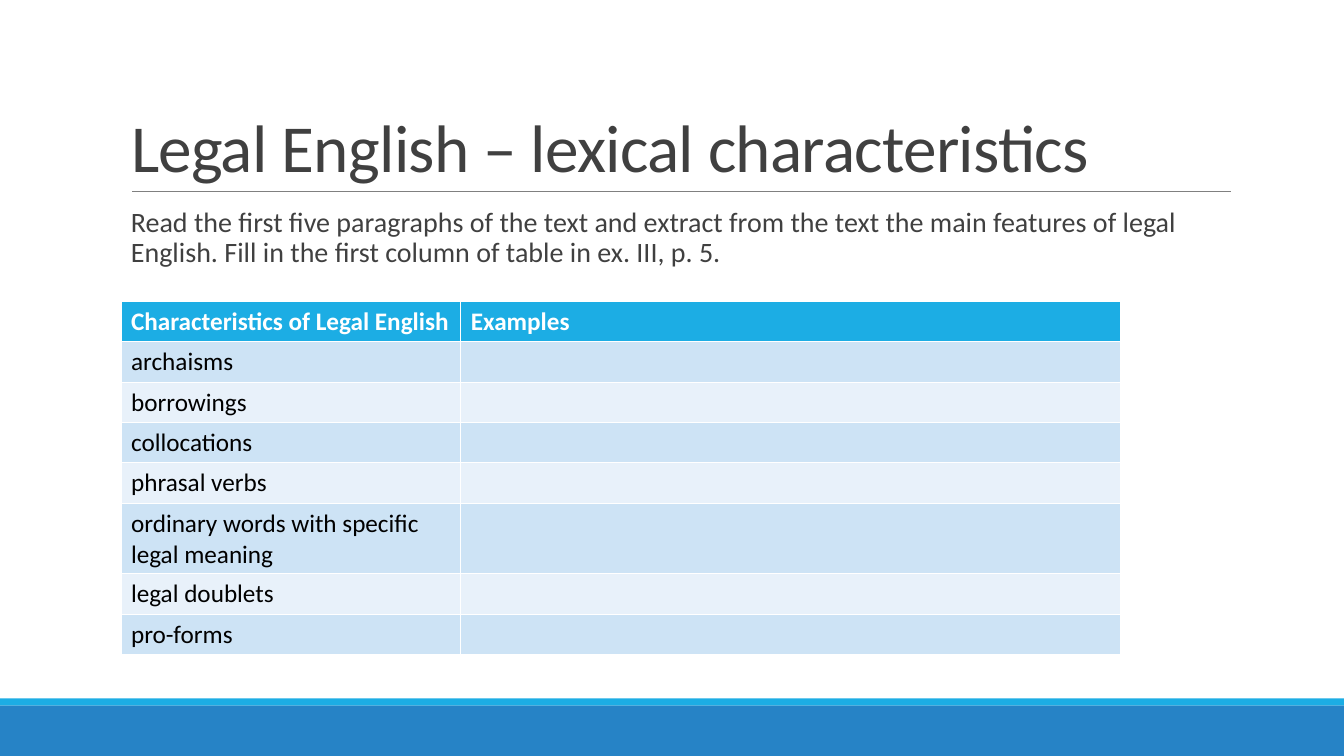
from pptx import Presentation
from pptx.dml.color import RGBColor
from pptx.enum.shapes import MSO_CONNECTOR, MSO_SHAPE
from pptx.enum.text import MSO_ANCHOR, PP_ALIGN
from pptx.oxml.ns import qn
from pptx.util import Inches, Pt
from lxml.etree import SubElement

FONT = "Calibri"
WHITE = RGBColor(0xFF, 0xFF, 0xFF)
BLACK = RGBColor(0, 0, 0)
GREY = RGBColor(0x80, 0x80, 0x80)
DARK = RGBColor(0x40, 0x40, 0x40)
CYAN = RGBColor(0x1C, 0xAD, 0xE4)
BLUE = RGBColor(0x26, 0x83, 0xC6)
BANDS = [RGBColor(0xCD, 0xE3, 0xF5), RGBColor(0xE8, 0xF1, 0xFA)]

TITLE = "Legal English – lexical characteristics"
TASK = ("Read the first five paragraphs of the text and extract from the text "
        "the main features of legal English. Fill in the first column of table "
        "in ex. III, p. 5.")
HEADERS = ["Characteristics of Legal English", "Examples"]
FEATURES = ["archaisms", "borrowings", "collocations", "phrasal verbs",
            "ordinary words with specific legal meaning", "legal doublets",
            "pro-forms"]


def add_run(p, text, size, color, bold=False):
    r = p.add_run()
    r.text = text
    r.font.name = FONT
    r.font.size = Pt(size)
    r.font.bold = bold
    r.font.color.rgb = color
    return r


def add_footer(s, left, top, width, height):
    strip = 0.07
    bars = [(top, strip, CYAN), (top + strip, height - strip, BLUE)]
    for y, h, color in bars:
        sp = s.shapes.add_shape(MSO_SHAPE.RECTANGLE, Inches(left), Inches(y),
                                Inches(width), Inches(h))
        sp.shadow.inherit = False
        sp.fill.solid()
        sp.fill.fore_color.rgb = color
        sp.line.fill.background()


def add_title(s, left, top, width, height):
    sp = s.shapes.title
    sp.left, sp.top = Inches(left), Inches(top)
    sp.width, sp.height = Inches(width), Inches(height)
    tf = sp.text_frame
    tf.word_wrap = True
    tf.vertical_anchor = MSO_ANCHOR.BOTTOM
    p = tf.paragraphs[0]
    p.alignment = PP_ALIGN.LEFT
    p.line_spacing = 0.85
    r = add_run(p, TITLE, 48, DARK)
    r.font._element.set("spc", "-50")

    x, y = left + 0.11, top + height
    line = s.shapes.add_connector(MSO_CONNECTOR.STRAIGHT, Inches(x), Inches(y),
                                  Inches(x + 10.9), Inches(y))
    line.line.color.rgb = GREY
    line.line.width = Pt(0.5)
    SubElement(line._element.spPr, qn("a:effectLst"))


def add_task(s, left, top, width, height):
    sp = s.shapes.add_textbox(Inches(left), Inches(top),
                              Inches(width), Inches(height))
    tf = sp.text_frame
    tf.word_wrap = True
    tf.margin_left = Inches(0.1)
    tf.margin_right = 0
    p = tf.paragraphs[0]
    p.line_spacing = 0.9
    p.space_before = Pt(12)
    p.space_after = Pt(2)
    add_run(p, TASK, 20, DARK)


def add_features(s, left, top, widths, row_height):
    rows = [HEADERS] + [[name, ""] for name in FEATURES]
    frame = s.shapes.add_table(len(rows), len(widths), Inches(left), Inches(top),
                               Inches(sum(widths)),
                               Inches(row_height * len(rows)))
    table = frame.table
    for col, width in zip(table.columns, widths):
        col.width = Inches(width)
    for i, texts in enumerate(rows):
        table.rows[i].height = Inches(row_height)
        header = i == 0
        for j, text in enumerate(texts):
            cell = table.cell(i, j)
            cell.fill.solid()
            cell.fill.fore_color.rgb = CYAN if header else BANDS[(i - 1) % 2]
            if text:
                add_run(cell.text_frame.paragraphs[0], text, 18,
                        WHITE if header else BLACK, header)


def main():
    prs = Presentation()
    prs.slide_width, prs.slide_height = Inches(13.33), Inches(7.5)
    s = prs.slides.add_slide(prs.slide_layouts[5])
    add_footer(s, 0, 6.93, 13.33, 0.57)
    add_title(s, 1.2, 0.31, 11, 1.59)
    add_task(s, 1.2, 2.02, 11, 0.9)
    add_features(s, 1.2, 2.99, [3.37, 6.54], 0.39)
    prs.save("out.pptx")


if __name__ == "__main__":
    main()
